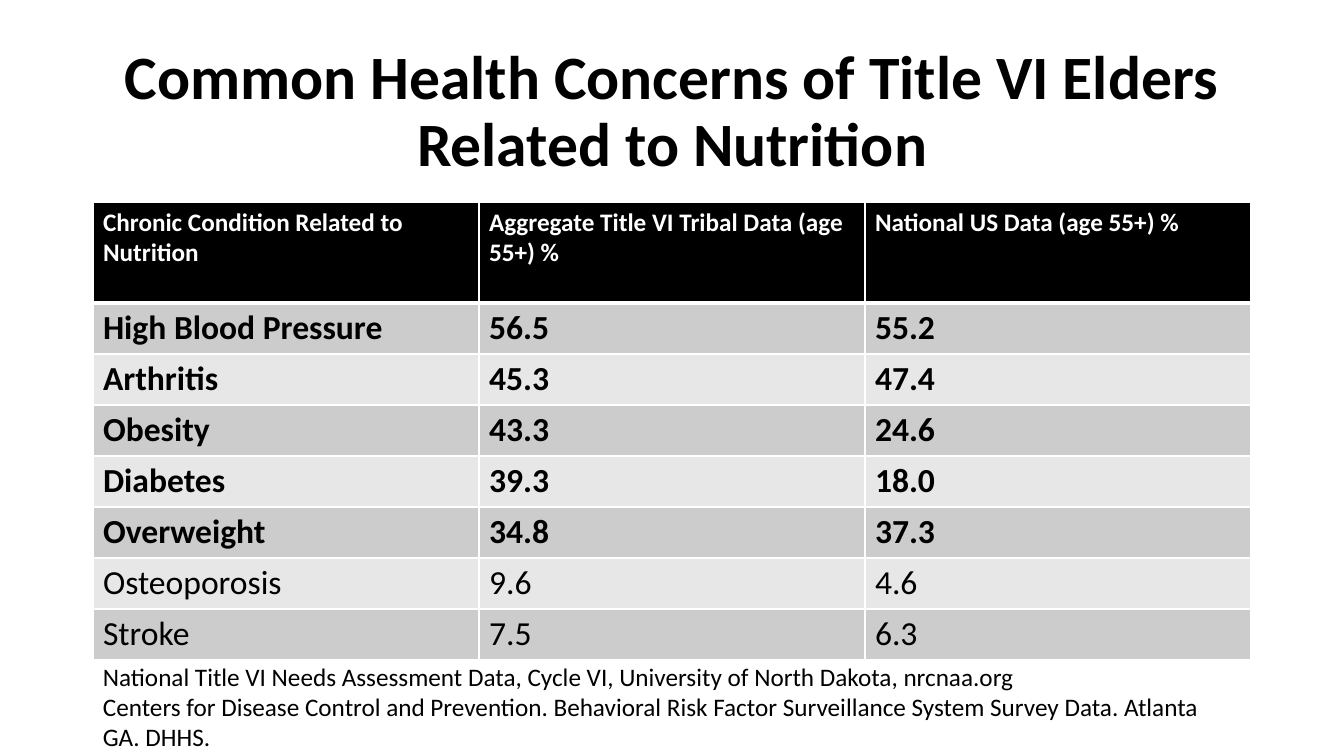
"""Build the slide on common nutrition-related health concerns of Title VI elders."""
from lxml import etree
from pptx import Presentation, util as u
from pptx.dml.color import RGBColor
from pptx.enum import text
from pptx.oxml.ns import qn

SCALE = 914400 / 100.8


def px(n):
    return u.Emu(round(n * SCALE))


def add_run(p, words, size, color, bold=False):
    r = p.add_run()
    r.text = words
    r.font.name = "Calibri"
    r.font.size = u.Pt(size)
    r.font.bold = bold
    r.font.color.rgb = RGBColor.from_string(color)


prs = Presentation()
prs.slide_width, prs.slide_height = px(1344), px(756)
s = prs.slides.add_slide(prs.slide_layouts[6])

tf = s.shapes.add_textbox(px(93), px(40), px(1159), px(146)).text_frame
tf.word_wrap = True
tf.vertical_anchor = text.MSO_ANCHOR.MIDDLE
p = tf.paragraphs[0]
p.alignment = text.PP_ALIGN.CENTER
p.line_spacing = 0.9
add_run(p, "Common Health Concerns of Title VI Elders Related to Nutrition", 44, "000000", True)

rows = [
    ("Chronic Condition Related to Nutrition",
     "Aggregate Title VI Tribal Data (age 55+) %",
     "National US Data (age 55+) %"),
    ("High Blood Pressure", "56.5", "55.2"),
    ("Arthritis", "45.3", "47.4"),
    ("Obesity", "43.3", "24.6"),
    ("Diabetes", "39.3", "18.0"),
    ("Overweight", "34.8", "37.3"),
    ("Osteoporosis", "9.6", "4.6"),
    ("Stroke", "7.5", "6.3"),
]
table = s.shapes.add_table(len(rows), 3, px(93), px(202), px(1158), px(458)).table
for column in table.columns:
    column.width = px(386)

for i, row in enumerate(rows):
    header = i == 0
    table.rows[i].height = px(101 if header else 51)
    fill = "000000" if header else ("E7E7E7", "CCCCCC")[i % 2]
    for j, words in enumerate(row):
        cell = table.cell(i, j)
        add_run(cell.text_frame.paragraphs[0], words, 18 if header else 24,
                "FFFFFF" if header else "000000", i < 6)
        tcPr = cell._tc.get_or_add_tcPr()
        for side in ("lnL", "lnR", "lnT", "lnB"):
            thick = (header and side == "lnB") or (i == 1 and side == "lnT")
            ln = etree.SubElement(tcPr, qn(f"a:{side}"), w=str(u.Pt(3 if thick else 1)))
            solid = etree.SubElement(ln, qn("a:solidFill"))
            etree.SubElement(solid, qn("a:srgbClr"), val="FFFFFF")
        cell.fill.solid()
        cell.fill.fore_color.rgb = RGBColor.from_string(fill)

sources = [
    "National Title VI Needs Assessment Data, Cycle VI, University of North Dakota, nrcnaa.org",
    "Centers for Disease Control and Prevention. Behavioral Risk Factor Surveillance System "
    "Survey Data. Atlanta GA. DHHS.",
]
tf = s.shapes.add_textbox(px(93), px(656), px(1133), px(101)).text_frame
tf.word_wrap = True
for i, source in enumerate(sources):
    p = tf.add_paragraph() if i else tf.paragraphs[0]
    add_run(p, source, 18, "000000")

prs.save("out.pptx")
